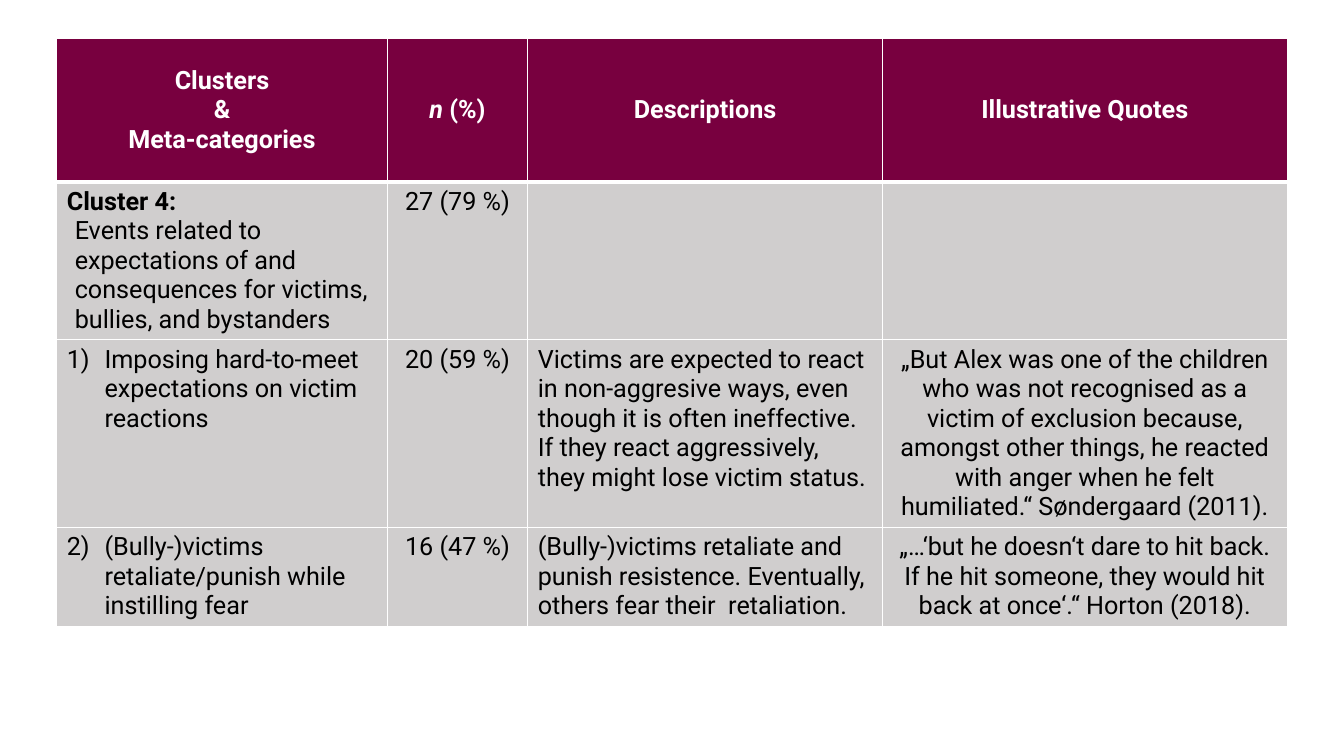
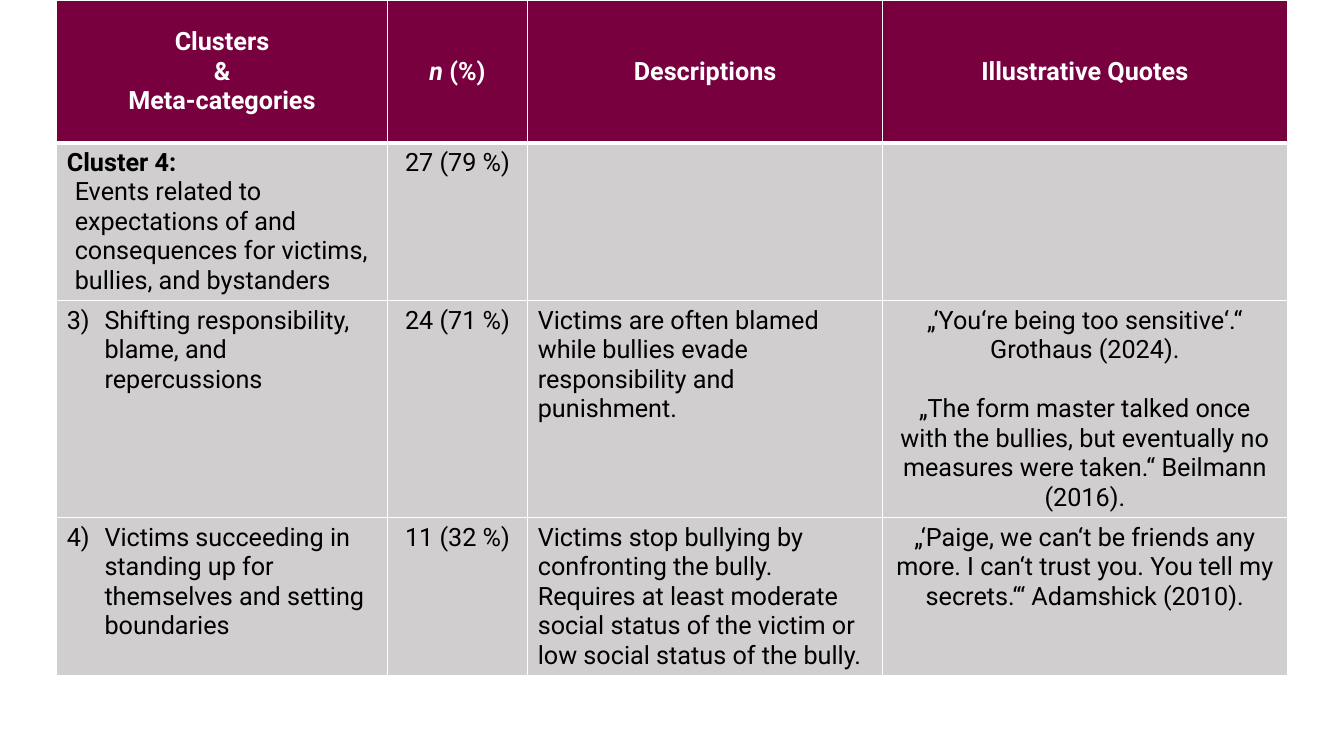
import dataclasses

import lxml.etree
import pptx
import pptx.dml.color
import pptx.enum.text
import pptx.oxml.ns
import pptx.util

Cm = pptx.util.Cm
Pt = pptx.util.Pt
RGB = pptx.dml.color.RGBColor.from_string
ALIGN = pptx.enum.text.PP_ALIGN
ANCHOR = pptx.enum.text.MSO_ANCHOR


@dataclasses.dataclass(frozen=True)
class Theme:
    font: str = "Roboto"
    size: int = 18
    header_fill: str = "78003F"
    header_text: str = "FFFFFF"
    body_fill: str = "D0CECE"
    body_text: str = "000000"
    rule: str = "FFFFFF"
    thin: float = 1
    thick: float = 3
    paragraph_gap: int = 21
    cluster_indent: float = 0.2
    number_indent: float = 0.95


@dataclasses.dataclass
class Para:
    """Runs are (text, font overrides); a "\n" text is a line break."""
    runs: list
    format: dict = dataclasses.field(default_factory=dict)
    indent: float = 0
    number: int = 0


def centred(*texts, gap=0):
    """One centred paragraph per text, with a gap between them."""
    return [Para([(text, {})], {"alignment": ALIGN.CENTER, "space_before": Pt(gap if i else 0)})
            for i, text in enumerate(texts)]


def set_all(target, values):
    for name, value in values.items():
        setattr(target, name, value)


class Deck:
    def __init__(self, theme):
        self.theme = theme
        self.presentation = pptx.Presentation()
        set_all(self.presentation, {"slide_width": Cm(33.87), "slide_height": Cm(19.05)})
        self.slide = None

    def new_slide(self):
        self.slide = self.presentation.slides.add_slide(self.presentation.slide_layouts[6])

    def table(self, left, top, widths, heights, rows):
        frame = self.slide.shapes.add_table(
            len(rows), len(widths), Cm(left), Cm(top), Cm(sum(widths)), Cm(sum(heights)))
        table = frame.table
        table.horz_banding = False
        for column, width in zip(table.columns, widths):
            column.width = Cm(width)
        for row, height in zip(table.rows, heights):
            row.height = Cm(height)
        for r, row in enumerate(rows):
            for c, paragraphs in enumerate(row):
                self.cell(table.cell(r, c), paragraphs, is_header=r == 0, below_header=r == 1)

    def cell(self, cell, paragraphs, is_header, below_header):
        theme = self.theme
        self.borders(cell, {"L": theme.thin, "R": theme.thin,
                            "T": theme.thick if below_header else theme.thin,
                            "B": theme.thick if is_header else theme.thin})
        cell.fill.solid()
        cell.fill.fore_color.rgb = RGB(theme.header_fill if is_header else theme.body_fill)
        cell.vertical_anchor = ANCHOR.MIDDLE if is_header else ANCHOR.TOP
        color = theme.header_text if is_header else theme.body_text
        for i, para in enumerate(paragraphs):
            paragraph = cell.text_frame.paragraphs[0] if i == 0 else cell.text_frame.add_paragraph()
            self.paragraph(paragraph, para, color, is_header)

    def paragraph(self, paragraph, para, color, bold):
        theme = self.theme
        if para.indent:
            properties = paragraph._p.get_or_add_pPr()
            properties.set("marL", str(Cm(para.indent)))
            properties.set("indent", str(-Cm(para.indent) if para.number else 0))
            if para.number:
                lxml.etree.SubElement(properties, pptx.oxml.ns.qn("a:buAutoNum"),
                                      type="arabicParenR", startAt=str(para.number))
        set_all(paragraph, para.format)
        for text, overrides in para.runs:
            if text == "\n":
                paragraph.add_line_break()
                continue
            run = paragraph.add_run()
            run.text = text
            set_all(run.font, {"name": theme.font, "size": Pt(theme.size), "bold": bold, **overrides})
            run.font.color.rgb = RGB(color)

    def borders(self, cell, widths):
        properties = cell._tc.get_or_add_tcPr()
        qn = pptx.oxml.ns.qn
        for side in "LRTB":
            line = lxml.etree.SubElement(properties, qn("a:ln" + side), w=str(Pt(widths[side])))
            fill = lxml.etree.SubElement(line, qn("a:solidFill"))
            lxml.etree.SubElement(fill, qn("a:srgbClr"), val=self.theme.rule)


THEME = Theme()

# Table parts shared by both slides
LEFT = 1.43
WIDTHS = [8.33, 3.54, 8.94, 10.2]
CENTRE = {"alignment": ALIGN.CENTER}
HEADER = [
    [Para([("Clusters", {})], CENTRE),
     Para([("&", {}), ("\n", {}), ("Meta-categories", {})], CENTRE)],
    [Para([("n ", {"italic": True}), ("(%)", {})], CENTRE)],
    centred("Descriptions"),
    centred("Illustrative Quotes"),
]
CLUSTER = [
    [Para([("Cluster 4:", {"bold": True})]),
     Para([("Events related to expectations of and consequences for victims, "
            "bullies, and bystanders", {})], indent=THEME.cluster_indent)],
    centred("27 (79 %)"),
    [],
    [],
]

# Per slide: table top, row heights, and (number, category, n, description, quotes)
SLIDES = [
    (0.98, [3.6, 3.98, 4.72, 2.5], [
        (1, "Imposing hard-to-meet expectations on victim reactions", "20 (59 %)",
         "Victims are expected to react in non-aggresive ways, even though it is often "
         "ineffective. If they react aggressively, they might lose victim status.",
         ["„But Alex was one of the children who was not recognised as a victim of exclusion "
          "because, amongst other things, he reacted with anger when he felt humiliated.“ "
          "Søndergaard (2011)."]),
        (2, "(Bully-)victims retaliate/punish while instilling fear", "16 (47 %)",
         "(Bully-)victims retaliate and punish resistence. Eventually, others fear their  "
         "retaliation.",
         ["„…‘but he doesn‘t dare to hit back. If he hit someone, they would hit back at "
          "once‘.“ Horton (2018)."]),
    ]),
    (0, [3.6, 3.98, 5.47, 3.98], [
        (3, "Shifting responsibility, blame, and repercussions", "24 (71 %)",
         "Victims are often blamed while bullies evade responsibility and punishment.",
         ["„‘You‘re being too sensitive‘.“ Grothaus (2024).",
          "„The form master talked once with the bullies, but eventually no measures were "
          "taken.“ Beilmann (2016)."]),
        (4, "Victims succeeding in standing up for themselves and setting boundaries",
         "11 (32 %)",
         "Victims stop bullying by confronting the bully. Requires at least moderate social "
         "status of the victim or low social status of the bully.",
         ["„‘Paige, we can‘t be friends any more. I can‘t trust you. You tell my secrets.‘“ "
          "Adamshick (2010)."]),
    ]),
]


def main():
    deck = Deck(THEME)
    for top, heights, categories in SLIDES:
        deck.new_slide()
        rows = [HEADER, CLUSTER]
        for number, category, count, description, quotes in categories:
            rows.append([
                [Para([(category, {})], indent=THEME.number_indent, number=number)],
                centred(count),
                [Para([(description, {})])],
                centred(*quotes, gap=THEME.paragraph_gap),
            ])
        deck.table(LEFT, top, WIDTHS, heights, rows)
    deck.presentation.save("out.pptx")


if __name__ == "__main__":
    main()
